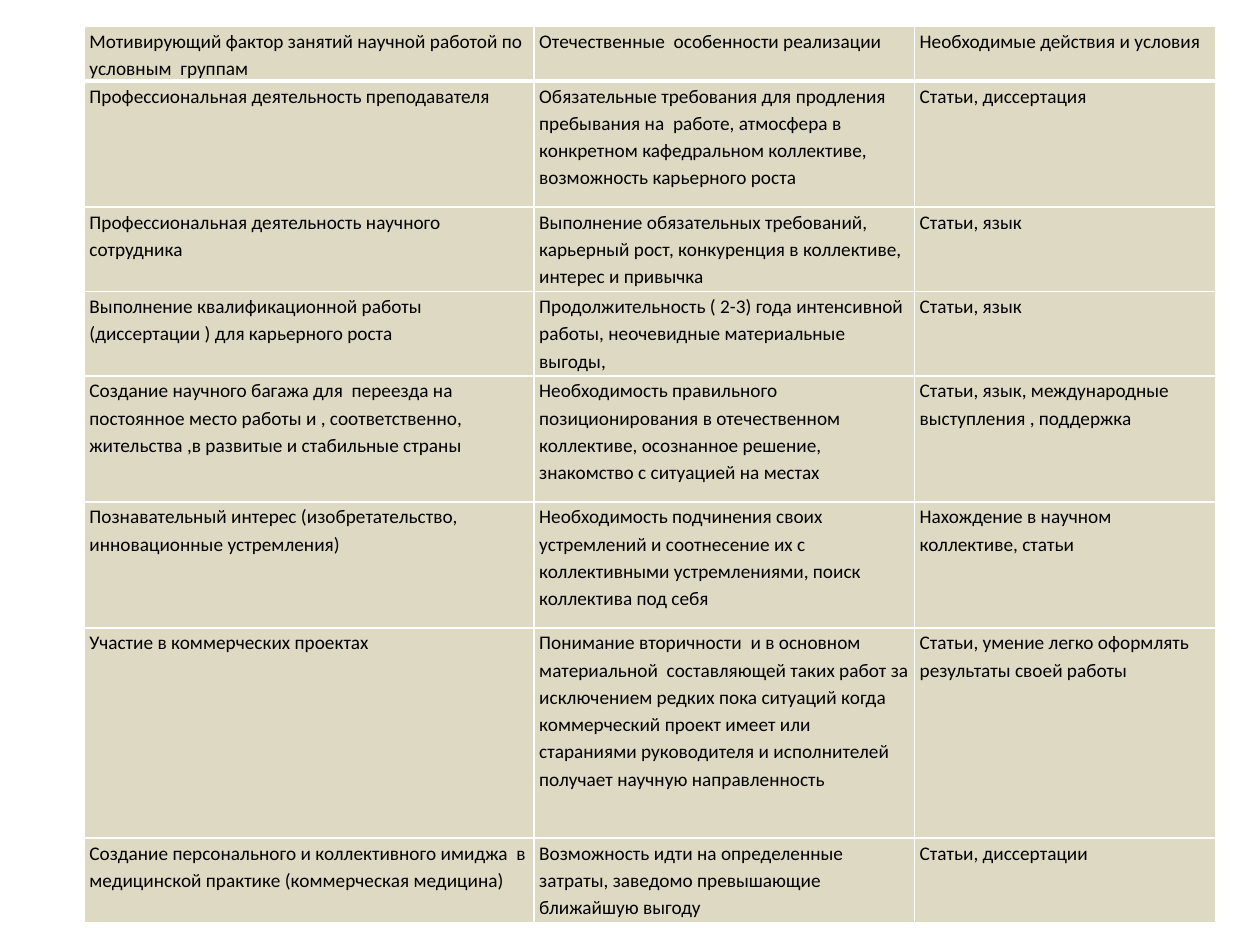
from lxml import etree
from pptx import Presentation
from pptx.dml.color import RGBColor
from pptx.oxml.ns import qn
from pptx.util import Inches, Pt

SAND = RGBColor(0xDD, 0xD9, 0xC3)
BLACK = RGBColor(0, 0, 0)
WHITE = RGBColor(0xFF, 0xFF, 0xFF)

COLUMN_WIDTHS = [3.57, 3.02, 2.39]
# Each row: height in inches, then the three cell texts.
ROWS = [
    (0.42, "Мотивирующий фактор занятий научной работой по условным  группам",
     "Отечественные  особенности реализации",
     "Необходимые действия и условия"),
    (1, "Профессиональная деятельность преподавателя",
     "Обязательные требования для продления пребывания на  работе, атмосфера в "
     "конкретном кафедральном коллективе, возможность карьерного роста",
     "Статьи, диссертация"),
    (0.67, "Профессиональная деятельность научного сотрудника",
     "Выполнение обязательных требований, карьерный рост, конкуренция в коллективе, "
     "интерес и привычка",
     "Статьи, язык"),
    (0.67, "Выполнение квалификационной работы (диссертации ) для карьерного роста",
     "Продолжительность ( 2-3) года интенсивной работы, неочевидные материальные выгоды,",
     "Статьи, язык"),
    (1, "Создание научного багажа для  переезда на постоянное место работы и , "
     "соответственно, жительства ,в развитые и стабильные страны",
     "Необходимость правильного позиционирования в отечественном коллективе, "
     "осознанное решение, знакомство с ситуацией на местах",
     "Статьи, язык, международные\nвыступления , поддержка"),
    (1, "Познавательный интерес (изобретательство, инновационные устремления)",
     "Необходимость подчинения своих устремлений и соотнесение их с коллективными "
     "устремлениями, поиск коллектива под себя",
     "Нахождение в научном коллективе, статьи"),
    (1.67, "Участие в коммерческих проектах",
     "Понимание вторичности  и в основном материальной  составляющей таких работ за "
     "исключением редких пока ситуаций когда коммерческий проект имеет или стараниями "
     "руководителя и исполнителей получает научную направленность",
     "Статьи, умение легко оформлять результаты своей работы"),
    (0.67, "Создание персонального и коллективного имиджа  в медицинской практике "
     "(коммерческая медицина)",
     "Возможность идти на определенные затраты, заведомо превышающие ближайшую выгоду",
     "Статьи, диссертации"),
]


def add_border(cell, side, width):
    """Draw one white edge; side is L, R, T or B, width is in points."""
    properties = cell._tc.get_or_add_tcPr()
    line = etree.SubElement(properties, qn(f"a:ln{side}"), w=str(Pt(width)))
    fill = etree.SubElement(line, qn("a:solidFill"))
    etree.SubElement(fill, qn("a:srgbClr"), val=str(WHITE))


deck = Presentation()
deck.slide_width, deck.slide_height = Inches(10), Inches(7.5)
page = deck.slides.add_slide(deck.slide_layouts[6])

table = page.shapes.add_table(
    len(ROWS), len(COLUMN_WIDTHS),
    Inches(0.67), Inches(0.21), Inches(8.98), Inches(7.09)).table
table.first_row = False
table.horz_banding = False
for column, width in zip(table.columns, COLUMN_WIDTHS):
    column.width = Inches(width)

for row_index, (height, *texts) in enumerate(ROWS):
    row = table.rows[row_index]
    row.height = Inches(height)
    for cell, content in zip(row.cells, texts):
        cell.margin_left = cell.margin_right = Inches(0.04)
        cell.margin_top = cell.margin_bottom = 0
        for side in "LRTB":
            add_border(cell, side, 3 if row_index == 0 and side == "B" else 1)
        cell.fill.solid()
        cell.fill.fore_color.rgb = SAND
        cell.text = content
        for para in cell.text_frame.paragraphs:
            para.line_spacing = 1.15
            para.font.name = "Calibri"
            para.font.size = Pt(11)
            para.font.color.rgb = BLACK

deck.save("out.pptx")
